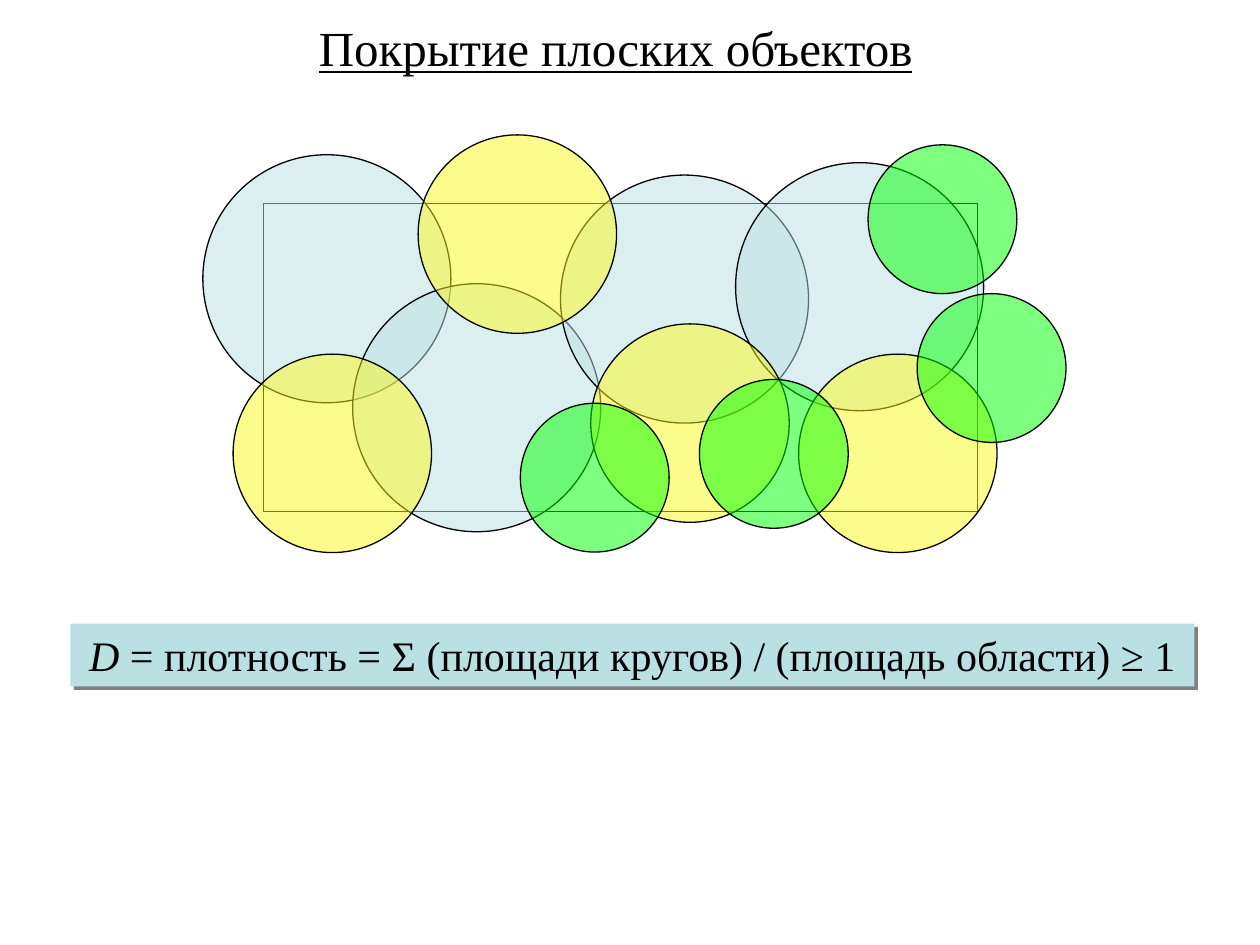
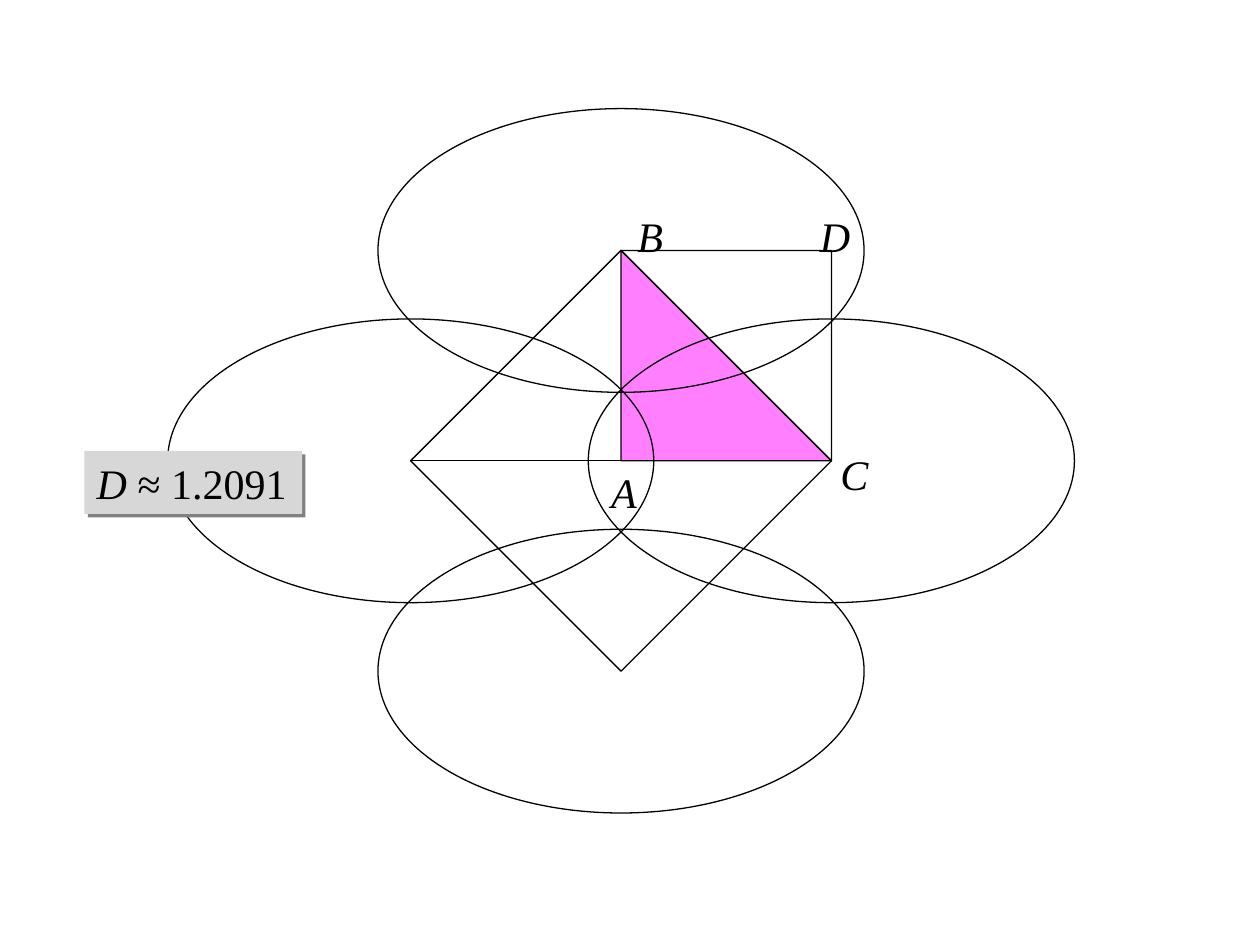
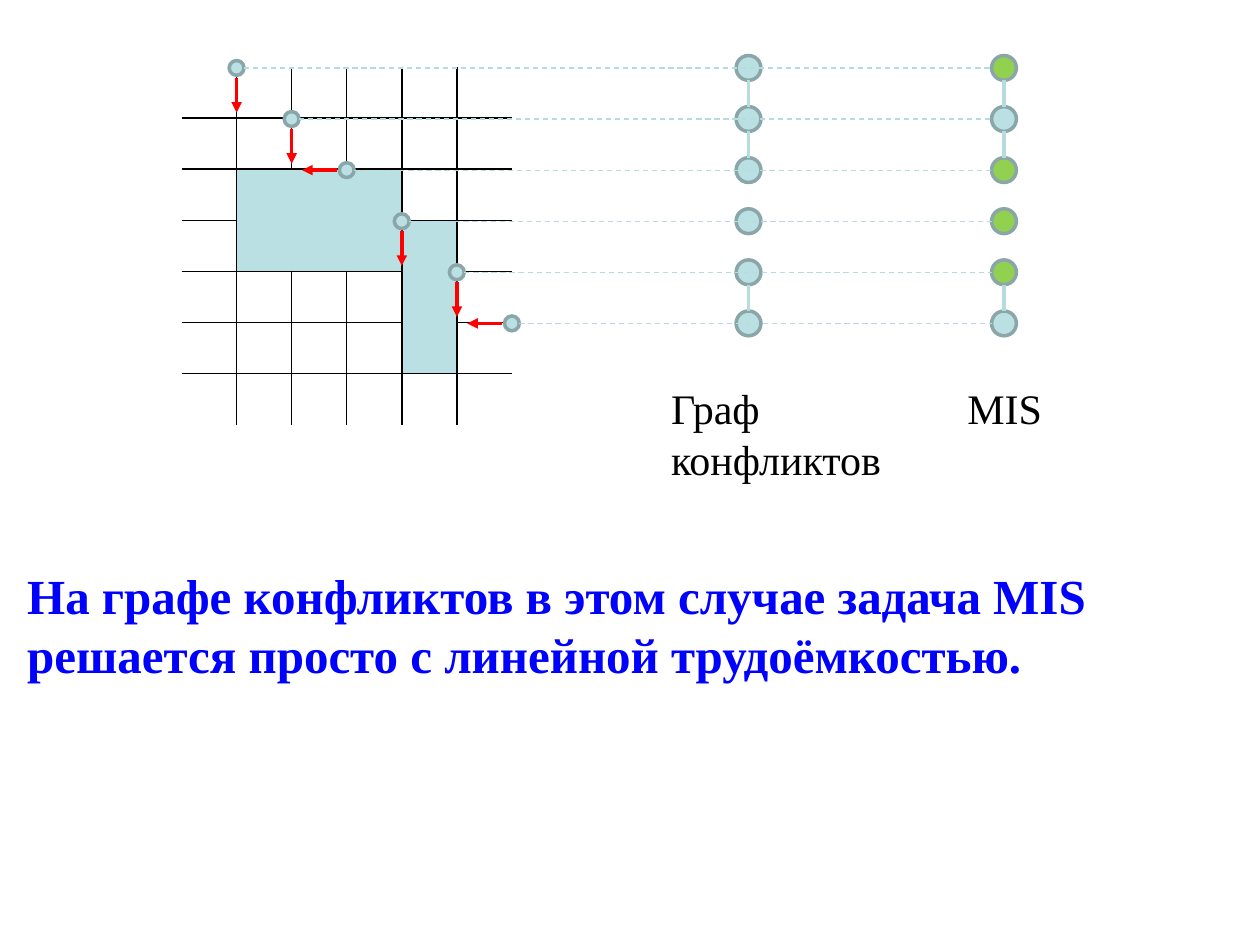
import pptx
import pptx.util
import pptx.dml.color
import pptx.enum.dml
import pptx.enum.shapes
import pptx.enum.text
import pptx.oxml
import pptx.oxml.ns
import lxml.etree

Cm = pptx.util.Cm
Pt = pptx.util.Pt
RGB = pptx.dml.color.RGBColor.from_string
SHAPE = pptx.enum.shapes.MSO_SHAPE
ALIGN = pptx.enum.text.PP_ALIGN
ANCHOR = pptx.enum.text.MSO_ANCHOR
qn = pptx.oxml.ns.qn

FONT = "Times New Roman"
COLORS = {
    "text": "000000", "statement": "0000FF", "aqua": "BBE0E3",
    "yellow": "FAFA1C", "green": "00FF00", "magenta": "FF00FF",
    "gray": "D7D7D7", "shadow": "808080", "node_edge": "8AA6A8",
    "graph_edge": "B6DCDF", "chosen": "92D050", "arrow": "FF0000",
}


def draw_shape(slide, kind, left, top, width, height, fill=None, opacity=100,
               line="text", line_width=0.75):
    shape = slide.shapes.add_shape(kind, Cm(left), Cm(top), Cm(width), Cm(height))
    shape.shadow.inherit = False
    if fill:
        shape.fill.solid()
        shape.fill.fore_color.rgb = RGB(COLORS[fill])
        if opacity < 100:
            color = shape.fill._xPr.find(".//" + qn("a:srgbClr"))
            lxml.etree.SubElement(color, qn("a:alpha"), val=str(opacity * 1000))
    else:
        shape.fill.background()
    if line:
        shape.line.color.rgb = RGB(COLORS[line])
        shape.line.width = Pt(line_width)
    else:
        shape.line.fill.background()
    return shape


def draw_line(slide, x1, y1, x2, y2, color, width, dashed=False, arrow=False):
    line = slide.shapes.add_connector(
        pptx.enum.shapes.MSO_CONNECTOR.STRAIGHT, Cm(x1), Cm(y1), Cm(x2), Cm(y2))
    line.line.color.rgb = RGB(COLORS[color])
    line.line.width = Pt(width)
    if dashed:
        line.line.dash_style = pptx.enum.dml.MSO_LINE.DASH
    if arrow:
        lxml.etree.SubElement(line.line._ln, qn("a:tailEnd"), type="triangle")
    lxml.etree.SubElement(line._element.spPr, qn("a:effectLst"))


prs = pptx.Presentation()
prs.slide_width, prs.slide_height = Cm(25.4), Cm(19.05)
title_only, blank = prs.slide_layouts[5], prs.slide_layouts[6]

# Slide 1: covering a rectangle with circles
covering = prs.slides.add_slide(title_only)
title = covering.shapes.title
title.left, title.top, title.width, title.height = Cm(5.31), Cm(0.23), Cm(14.2), Cm(1.45)
title.text_frame.text = "Покрытие плоских объектов"
title.text_frame.vertical_anchor = ANCHOR.TOP
title.text_frame.auto_size = pptx.enum.text.MSO_AUTO_SIZE.NONE
heading = title.text_frame.paragraphs[0]
heading.alignment = ALIGN.CENTER
heading.font.name, heading.font.size = FONT, Pt(28)
heading.font.underline = True
heading.font.color.rgb = RGB(COLORS["text"])

draw_shape(covering, SHAPE.RECTANGLE, 5.31, 4.11, 14.4, 6.2)
circles = [
    ("aqua", 5, [(4.09, 3.12), (7.11, 5.72), (11.3, 3.53), (14.83, 3.28)]),
    ("yellow", 4, [(8.43, 2.72), (4.7, 7.14), (11.91, 6.53), (16.1, 7.14)]),
    ("green", 3, [(10.49, 8.13), (14.1, 7.65), (17.5, 2.92), (18.49, 5.92)]),
]
for color, diameter, corners in circles:
    for left, top in corners:
        draw_shape(covering, SHAPE.OVAL, left, top, diameter, diameter, color, 50)

# Slide 2: covering with ellipses centred on the corners of a rhombus
ellipses = prs.slides.add_slide(blank)
center_x, center_y, half_diagonal = 12.52, 9.29, 4.24
side = 6
ellipse_width, ellipse_height = 9.8, 5.72

triangle_box = (center_x, center_y - half_diagonal, half_diagonal, half_diagonal)
triangle_bdc = draw_shape(ellipses, SHAPE.RIGHT_TRIANGLE, *triangle_box)
triangle_bdc.rotation = 180
rhombus = draw_shape(ellipses, SHAPE.RECTANGLE, center_x - side / 2,
                     center_y - side / 2, side, side)
rhombus.rotation = 45
draw_shape(ellipses, SHAPE.RIGHT_TRIANGLE, *triangle_box, "magenta", 50)
for dx, dy in [(1, 0), (0, -1), (-1, 0), (0, 1)]:
    draw_shape(ellipses, SHAPE.OVAL,
               center_x + dx * half_diagonal - ellipse_width / 2,
               center_y + dy * half_diagonal - ellipse_height / 2,
               ellipse_width, ellipse_height)
draw_line(ellipses, center_x - half_diagonal, center_y,
          center_x + half_diagonal, center_y, "text", 0.75)

# Slide 3: grid with obstacles, conflict graph and independent set
conflicts = prs.slides.add_slide(blank)
columns, rows = 6, 7
grid_left, grid_top, cell_width, cell_height = 3.66, 1.35, 1.11, 1.03
grid = conflicts.shapes.add_table(
    rows, columns, Cm(grid_left), Cm(grid_top),
    Cm(columns * cell_width), Cm(rows * cell_height)).table
grid.first_row = grid.horz_banding = False
for column in grid.columns:
    column.width = Cm(cell_width)
for row in grid.rows:
    row.height = Cm(cell_height)
obstacles = [(2, 1), (3, 4)]
grid.cell(2, 1).merge(grid.cell(3, 3))
grid.cell(3, 4).merge(grid.cell(5, 4))
for r in range(rows):
    for c in range(columns):
        cell = grid.cell(r, c)
        cell.margin_top = cell.margin_bottom = 0
        inner_sides = {"L": c > 0, "R": c < columns - 1, "T": r > 0, "B": r < rows - 1}
        for edge, inner in inner_sides.items():
            if cell.is_spanned:
                continue
            border = lxml.etree.SubElement(
                cell._tc.get_or_add_tcPr(), qn("a:ln" + edge), w=str(Pt(1)))
            if inner:
                paint = lxml.etree.SubElement(border, qn("a:solidFill"))
                lxml.etree.SubElement(paint, qn("a:srgbClr"), val=COLORS["text"])
            else:
                lxml.etree.SubElement(border, qn("a:noFill"))
        if (r, c) in obstacles:
            cell.fill.solid()
            cell.fill.fore_color.rgb = RGB(COLORS["aqua"])
        else:
            cell.fill.background()

# Points on the grid, their moves, and the vertices on the same levels
point_size, vertex_size = 0.3, 0.5
move_gap, move_length = 0.2, 0.7
graph_x, mis_x = 15.09, 20.24
moves = ["down", "down", "left", "down", "down", "left"]
chosen = [0, 2, 3, 4]
conflict_starts = [0, 1, 4]
levels = [1.37 + k * cell_height for k in range(len(moves))]

for k, (y, move) in enumerate(zip(levels, moves)):
    x = grid_left + (k + 1) * cell_width
    draw_shape(conflicts, SHAPE.OVAL, x - point_size / 2, y - point_size / 2,
               point_size, point_size, "aqua", line="node_edge", line_width=2)
    dx, dy = (0, 1) if move == "down" else (-1, 0)
    reach = move_gap + move_length
    draw_line(conflicts, x + dx * move_gap, y + dy * move_gap,
              x + dx * reach, y + dy * reach, "arrow", 2, arrow=True)
    for vertex_x in (graph_x, mis_x):
        color = "chosen" if vertex_x == mis_x and k in chosen else "aqua"
        draw_shape(conflicts, SHAPE.OVAL, vertex_x - vertex_size / 2,
                   y - vertex_size / 2, vertex_size, vertex_size, color,
                   line="node_edge", line_width=2)
    draw_line(conflicts, x + point_size / 2, y, mis_x - vertex_size / 2, y,
              "graph_edge", 0.75, dashed=True)

for vertex_x in (graph_x, mis_x):
    for k in conflict_starts:
        draw_line(conflicts, vertex_x, levels[k] + vertex_size / 2,
                  vertex_x, levels[k + 1] - vertex_size / 2, "graph_edge", 2)

# Density banners with a hard shadow
banners = [
    (covering, 1.42, 12.57, 22.66, ALIGN.CENTER, False,
     "D", " = плотность = Σ (площади кругов) / (площадь области) ≥ 1"),
    (ellipses, 1.7, 9.09, 4.39, ALIGN.LEFT, True, "D ", "≈ 1.2091"),
]
for slide, left, top, width, alignment, wrap, symbol, formula in banners:
    fill = "aqua" if slide is covering else "gray"
    banner = draw_shape(slide, SHAPE.RECTANGLE, left, top, width, 1.27, fill, line=None)
    effects = banner._element.spPr.find(qn("a:effectLst"))
    shadow = lxml.etree.SubElement(effects, qn("a:outerShdw"), dist=str(Pt(2.8)),
                                   dir="2700000", algn="ctr", rotWithShape="0")
    lxml.etree.SubElement(shadow, qn("a:srgbClr"), val=COLORS["shadow"])
    banner.text_frame.word_wrap = wrap
    density = banner.text_frame.paragraphs[0]
    density.alignment = alignment
    density.font.name, density.font.size = FONT, Pt(24)
    density.font.color.rgb = RGB(COLORS["text"])
    for text, italic in [(symbol, True), (formula, False)]:
        run = density.add_run()
        run.text = text
        run.font.name, run.font.size, run.font.italic = FONT, Pt(24), italic
        run.font.color.rgb = RGB(COLORS["text"])

# Labels and the closing statement
labels = [
    (ellipses, "A", 12.07, 9.27, 0.89, 1.02),
    (ellipses, "B", 12.6, 4.11, 0.89, 1.02),
    (ellipses, "C", 16.69, 8.92, 0.94, 1.02),
    (ellipses, "D", 16.28, 4.11, 0.97, 1.02),
    (conflicts, "Граф\nконфликтов", 13.28, 7.59, 4.78, 2.31),
    (conflicts, "MIS", 19.25, 7.59, 2.03, 1.27),
    (conflicts, "На графе конфликтов в этом случае задача MIS решается просто "
     "с линейной трудоёмкостью.", 0.3, 11.28, 24.8, 2.64),
]
for slide, text, left, top, width, height in labels:
    is_statement = width > 20
    label = slide.shapes.add_textbox(Cm(left), Cm(top), Cm(width), Cm(height))
    label.text_frame.word_wrap = is_statement
    label.text_frame.text = text
    for paragraph in label.text_frame.paragraphs:
        paragraph.font.name = FONT
        paragraph.font.size = Pt(28 if is_statement else 24)
        paragraph.font.bold = is_statement
        paragraph.font.italic = slide is ellipses
        paragraph.font.color.rgb = RGB(COLORS["statement" if is_statement else "text"])

prs.save("out.pptx")
